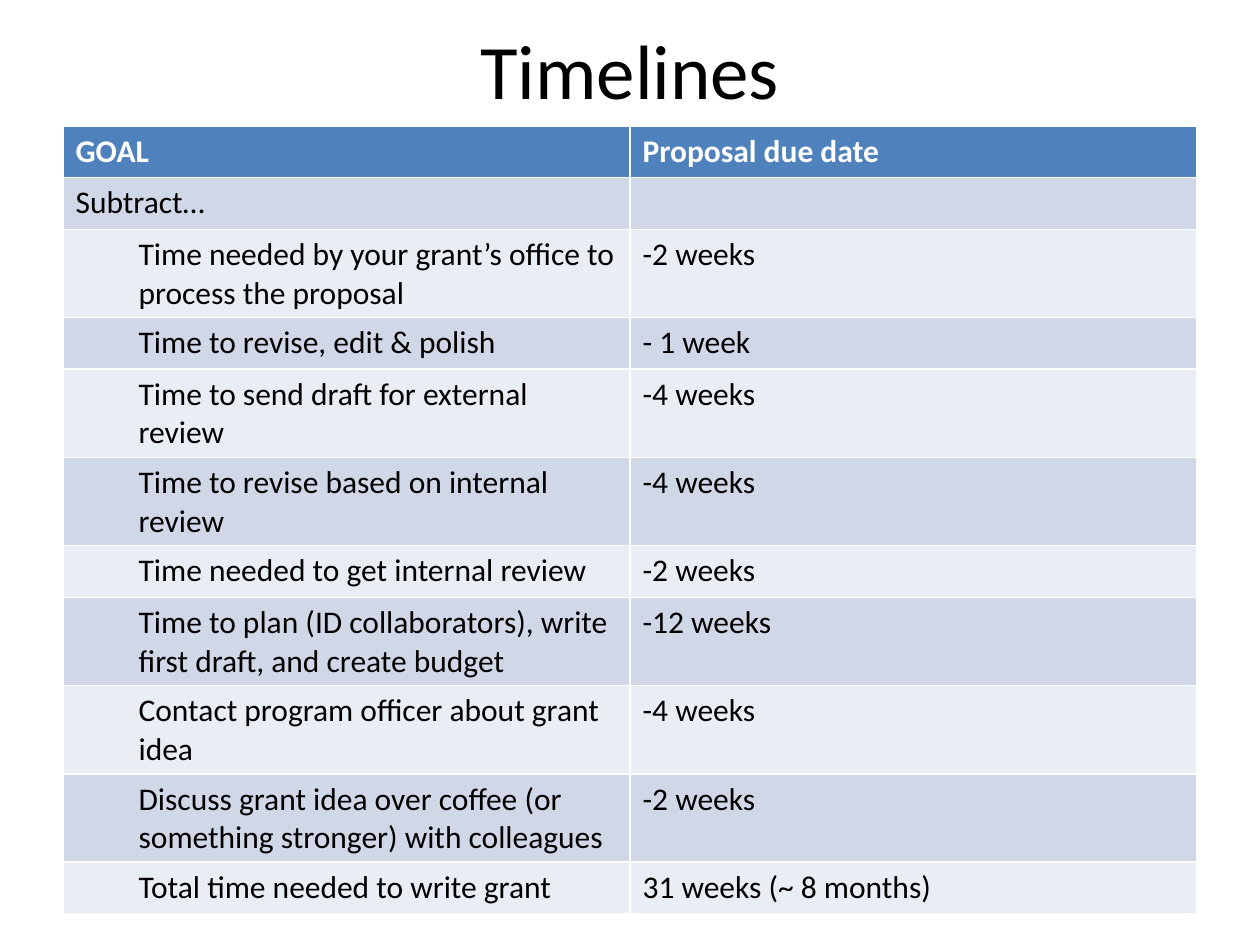
"""Build the grant timelines slide."""
from pptx import Presentation
from pptx.dml.color import RGBColor as RGB
from pptx.enum.text import MSO_ANCHOR as Anchor, PP_ALIGN as Align
from pptx.util import Inches, Pt

BLACK = RGB(0x00, 0x00, 0x00)
WHITE = RGB(0xFF, 0xFF, 0xFF)
BLUE = RGB(0x4F, 0x81, 0xBD)
BANDS = RGB(0xE9, 0xED, 0xF4), RGB(0xD0, 0xD8, 0xE8)

TITLE = "Timelines"
HEAD = ("GOAL", "Proposal due date")
LEAD = ("Subtract…", "")
STEPS = [
    ("Time needed by your grant’s office to process the proposal", "-2 weeks"),
    ("Time to revise, edit & polish", "- 1 week"),
    ("Time to send draft for external review", "-4 weeks"),
    ("Time to revise based on internal review", "-4 weeks"),
    ("Time needed to get internal review", "-2 weeks"),
    ("Time to plan (ID collaborators), write first draft, and create budget",
     "-12 weeks"),
    ("Contact program officer about grant idea", "-4 weeks"),
    ("Discuss grant idea over coffee (or something stronger) with colleagues",
     "-2 weeks"),
    ("Total time needed to write grant", "31 weeks (~ 8 months)"),
]
ROWS = [HEAD, LEAD, *STEPS]
ROW_H = 0.41


def write(frame, text, size=18, color=BLACK, bold=False, align=None, level=0):
    para = frame.paragraphs[0]
    para.alignment = align
    para.level = level
    if level:
        props = para._p.get_or_add_pPr()
        props.set("marL", str(Inches(0.5 * level)))
        props.set("indent", "0")
    para.font.size = Pt(size)
    if text:
        run = para.add_run()
        run.text = text
        font = run.font
        font.name, font.size, font.bold = "Calibri", Pt(size), bold
        font.color.rgb = color


def main():
    deck = Presentation()
    deck.slide_width, deck.slide_height = Inches(10), Inches(7.5)
    slide = deck.slides.add_slide(deck.slide_layouts[6])

    box = slide.shapes.add_textbox(
        Inches(0.5), Inches(-0.08), Inches(9), Inches(1.25))
    frame = box.text_frame
    frame.word_wrap = True
    frame.vertical_anchor = Anchor.MIDDLE
    write(frame, TITLE, size=44, align=Align.CENTER)

    table = slide.shapes.add_table(
        len(ROWS), len(HEAD), Inches(0.5), Inches(1), Inches(9),
        Inches(ROW_H * len(ROWS))).table
    for r, row in enumerate(ROWS):
        table.rows[r].height = Inches(ROW_H)
        top = r == 0
        for c, text in enumerate(row):
            cell = table.cell(r, c)
            cell.fill.solid()
            cell.fill.fore_color.rgb = BLUE if top else BANDS[r % 2]
            write(cell.text_frame, text, color=WHITE if top else BLACK,
                  bold=top, level=int(c == 0 and r > 1))

    deck.save("out.pptx")


if __name__ == "__main__":
    main()
